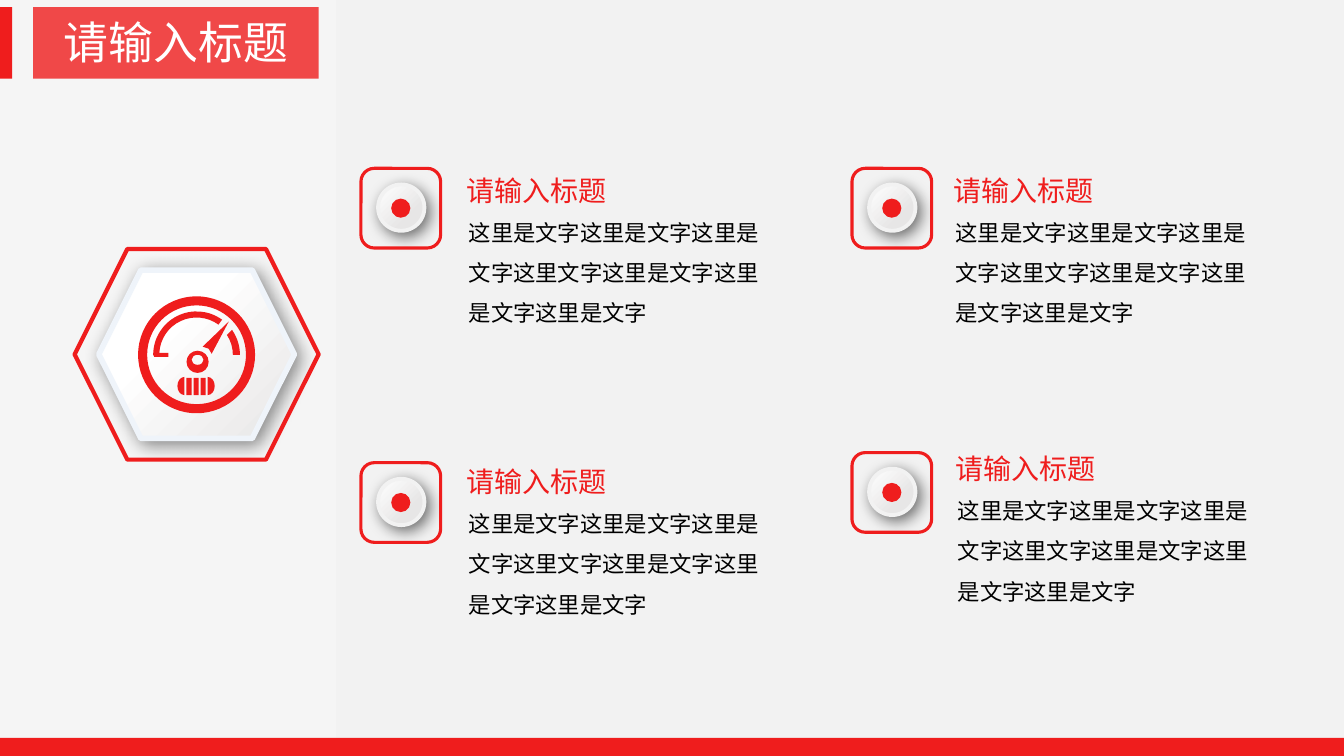
from math import ceil, cos, radians, sin, tan

from lxml.etree import Element, SubElement
from pptx import Presentation
from pptx.dml.color import RGBColor
from pptx.enum.shapes import MSO_SHAPE as Preset
from pptx.enum.text import MSO_ANCHOR as Anchor, MSO_AUTO_SIZE as AutoSize, PP_ALIGN as Align
from pptx.oxml.ns import qn
from pptx.util import Inches, Pt

RED, WHITE, BLACK, GREY = "EF1D1D", "FFFFFF", "000000", "E7E6E6"
FONT = "Noto Sans CJK SC"
HEADING = "请输入标题"
BODY = "这里是文字这里是文字这里是文字这里文字这里是文字这里是文字这里是文字"
UNITS = 1000  # freeform units in an inch
# Left and top of each badge, then of its heading
ITEMS = [
    ((3.58, 1.67), (4.52, 1.67)),
    ((8.45, 1.67), (9.35, 1.67)),
    ((3.58, 4.59), (4.52, 4.56)),
    ((8.45, 4.49), (9.37, 4.43)),
]


def color(hex_text):
    return RGBColor.from_string(hex_text)


def arc(x, y, rx, ry, start=0, end=360):
    """A start point and Bezier curves (two controls, end); angles run anticlockwise."""
    count = ceil(abs(end - start) / 90)
    step = radians(end - start) / count
    pull = 4 / 3 * tan(step / 4)

    def point(angle, reach=0):
        return (x + rx * (cos(angle) - reach * sin(angle)),
                y - ry * (sin(angle) + reach * cos(angle)))

    angles = [radians(start) + step * i for i in range(count + 1)]
    curves = [(point(a, pull), point(b, -pull), point(b)) for a, b in zip(angles, angles[1:])]
    return [(point(angles[0]),), *curves]


def corners(*points):
    return [(point,) for point in points]


def gauge_contours():
    """Outlines of the gauge icon; one inside another cuts a hole."""
    x, y = 1.95, 3.52
    rim = [arc(x, y, 0.58, 0.58), arc(x, y, 0.49, 0.49, 360, 0)]
    dial = (arc(x, y, 0.43, 0.43, 180, 54) + arc(x, y, 0.37, 0.37, 54, 177)
            + corners((1.67, 3.5), (1.67, 3.54), (1.53, 3.54)))
    dial_end = arc(x, y, 0.43, 0.43, 0, 35) + arc(x, y, 0.36, 0.36, 33, 0)
    needle = corners((2.01, 3.44), (2.27, 3.19), (2.1, 3.51), (2.07, 3.46))
    hub = [arc(1.96, 3.59, 0.11, 0.11), arc(1.96, 3.57, 0.06, 0.05, 360, 0)]
    caps = [arc(1.83, 3.83, 0.07, 0.09, 90, 270), arc(2.06, 3.83, 0.07, 0.09, -90, 90)]
    bars = [corners((left, 3.75), (left + 0.05, 3.75), (left + 0.05, 3.92), (left, 3.92))
            for left in (1.85, 1.92, 1.99)]
    return [*rim, dial, dial_end, needle, *hub, *caps, *bars]


def set_gradient(fill, stops, angle):
    fill.gradient()
    fill.gradient_angle = angle
    for stop, (position, shade) in zip(fill.gradient_stops, stops):
        stop.position = position
        stop.color.rgb = color(shade)


def write(shape, text, size, shade, align=Align.LEFT, wrap=False, spacing=None):
    frame = shape.text_frame
    frame.word_wrap = wrap
    frame.auto_size = AutoSize.SHAPE_TO_FIT_TEXT
    frame.vertical_anchor = Anchor.TOP
    para = frame.paragraphs[0]
    para.alignment = align
    if spacing:
        para.line_spacing = spacing
    span = para.add_run()
    span.text = text
    span.font.size = Pt(size)
    span.font.name = FONT
    span.font.color.rgb = color(shade)
    SubElement(span.font._element, qn("a:ea"), typeface=FONT)


class Page:
    """The current slide and its house style."""

    def __init__(self, deck):
        self.slide = deck.slides.add_slide(deck.slide_layouts[5])
        self.shapes = self.slide.shapes
        set_gradient(self.slide.background.fill, [(0, "F5F5F5"), (0.5, "F2F2F2")], 0)

    def title(self, text, box):
        title = self.shapes.title
        title.left, title.top, title.width, title.height = map(Inches, box)
        write(title, text, 32, WHITE, Align.CENTER)
        title.element.getparent().append(title.element)

    def shape(self, preset, box, fill=None, alpha=None, line=None, weight=1):
        shape = self.shapes.add_shape(preset, *map(Inches, box))
        shape.shadow.inherit = False
        if fill:
            shape.fill.solid()
            shape.fill.fore_color.rgb = color(fill)
        else:
            shape.fill.background()
        if alpha:
            solid = shape.element.spPr.find(qn("a:solidFill"))
            SubElement(solid[0], qn("a:alpha"), val=str(alpha * 1000))
        if line:
            shape.line.color.rgb = color(line)
            shape.line.width = Pt(weight)
        else:
            shape.line.fill.background()
        return shape

    def raised(self, preset, box, stops, line, weight, blur, alpha):
        """A shape with a diagonal gradient and a soft shadow."""
        shape = self.shape(preset, box, line=line, weight=weight)
        set_gradient(shape.fill, stops, 315)
        effects = shape.element.spPr.find(qn("a:effectLst"))
        shadow = SubElement(effects, qn("a:outerShdw"), blurRad=str(Pt(blur)), dist=str(Pt(4)),
                            dir="2700000", algn="tl", rotWithShape="0")
        shade = SubElement(shadow, qn("a:srgbClr"), val=BLACK)
        SubElement(shade, qn("a:alpha"), val=str(alpha * 1000))

    def text(self, text, box, **style):
        write(self.shapes.add_textbox(*map(Inches, box)), text, **style)

    def icon(self, contours, fill):
        """One freeform; each line that has control points is bent into a curve."""
        scaled = [[[(round(x * UNITS), round(y * UNITS)) for x, y in step] for step in contour]
                  for contour in contours]
        builder = self.shapes.build_freeform(*scaled[0][0][-1], scale=Inches(1) / UNITS)
        for number, contour in enumerate(scaled):
            if number:
                builder.move_to(*contour[0][-1])
            builder.add_line_segments([step[-1] for step in contour[1:]], close=True)
        icon = builder.convert_to_shape()
        left, top = (min(step[-1][axis] for contour in scaled for step in contour)
                     for axis in (0, 1))
        # Closing a contour adds no line of its own once it is back at the start
        lines = list(icon.element.iter(qn("a:lnTo")))
        steps = [step for contour in scaled for step in contour[1:]]
        for line, step in zip(lines, steps):
            if len(step) == 3:
                curve = Element(qn("a:cubicBezTo"))
                for x, y in step:
                    SubElement(curve, qn("a:pt"), x=str(x - left), y=str(y - top))
                line.getparent().replace(line, curve)
        icon.shadow.inherit = False
        icon.fill.solid()
        icon.fill.fore_color.rgb = color(fill)
        icon.line.fill.background()

    def badge(self, left, top):
        self.raised(Preset.OVAL, (left + 0.17, top + 0.16, 0.46, 0.46),
                    [(0, WHITE), (0.7, GREY)], "F2F2F2", 2.75, 11, 54)
        self.shape(Preset.ROUNDED_RECTANGLE, (left, top, 0.79, 0.79), line=RED, weight=2.25)
        self.shape(Preset.OVAL, (left + 0.3, top + 0.3, 0.19, 0.19), fill=RED)

    def item(self, badge, heading):
        left, top = heading
        self.badge(*badge)
        self.text(BODY, (left + 0.03, top + 0.32, 3.15, 1.31), size=16, shade=BLACK,
                  wrap=True, spacing=1.5)
        self.text(HEADING, (left, top, 1.6, 0.44), size=20, shade=RED, align=Align.CENTER)


def main():
    deck = Presentation()
    deck.slide_width, deck.slide_height = Inches(13.33), Inches(7.5)
    page = Page(deck)
    page.shape(Preset.RECTANGLE, (0.33, 0.07, 2.83, 0.71), fill=RED, alpha=80)
    page.shape(Preset.RECTANGLE, (-0.12, 0.07, 0.24, 0.71), fill=RED)
    page.shape(Preset.RECTANGLE, (-0.15, 7.32, 13.48, 0.18), fill=RED)
    page.title(HEADING, (0.52, 0.1, 2.45, 0.64))
    page.raised(Preset.HEXAGON, (0.98, 2.68, 1.94, 1.67),
                [(0.34, WHITE), (1, GREY)], "EFF4FA", 4, 13, 43)
    page.shape(Preset.HEXAGON, (0.74, 2.47, 2.42, 2.09), line=RED, weight=3)
    page.icon(gauge_contours(), RED)
    for badge, heading in ITEMS:
        page.item(badge, heading)
    deck.save("out.pptx")


if __name__ == "__main__":
    main()
